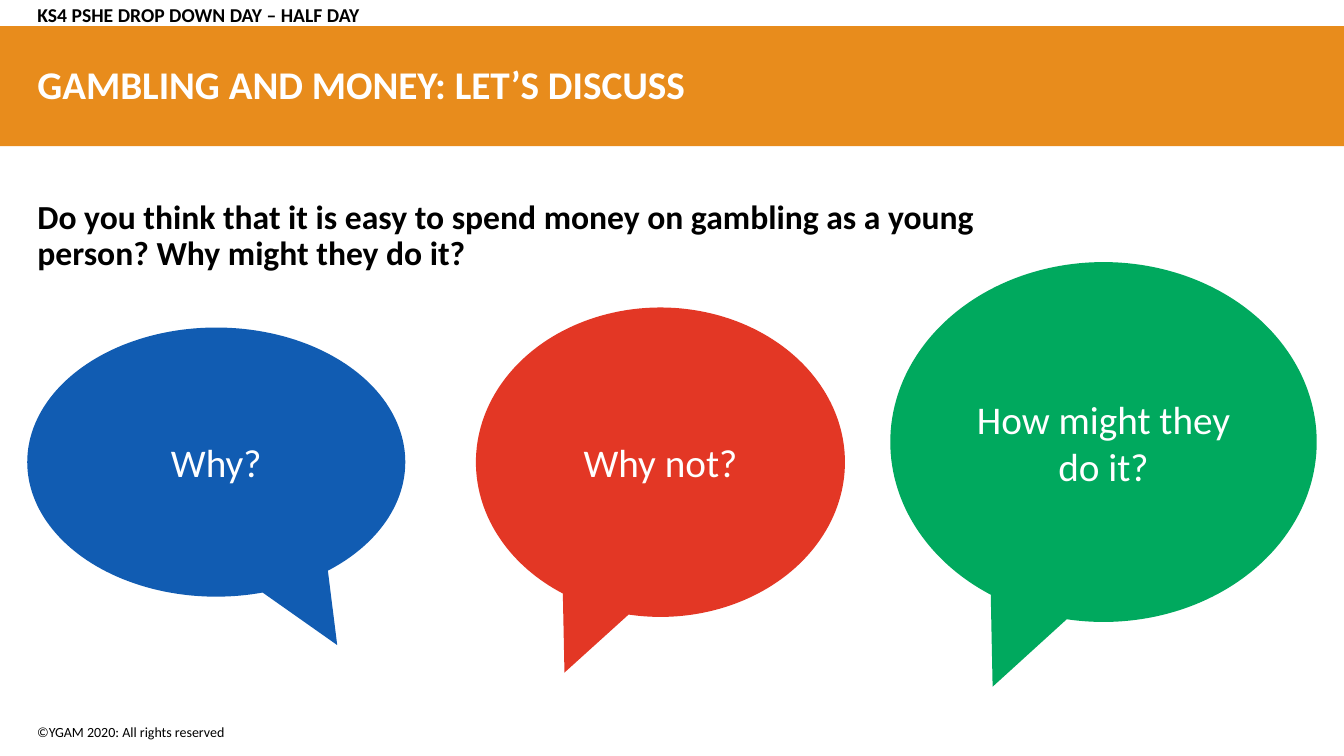
"""Build the discussion slide on gambling and money with three speech bubbles."""
from lxml.etree import SubElement
from pptx import Presentation
from pptx.dml.color import RGBColor
from pptx.enum.shapes import MSO_SHAPE as Shape
from pptx.enum.text import MSO_ANCHOR as Anchor, MSO_AUTO_SIZE as AutoSize, PP_ALIGN as Align
from pptx.oxml.ns import qn
from pptx.util import Inches, Pt

WHITE = RGBColor(0xFF, 0xFF, 0xFF)
BLACK = RGBColor(0x00, 0x00, 0x00)
ORANGE = RGBColor(0xE8, 0x8C, 0x1C)
RED = RGBColor(0xE3, 0x37, 0x25)
BLUE = RGBColor(0x11, 0x5C, 0xB2)
GREEN = RGBColor(0x00, 0xA9, 0x5E)
MARGIN = 2.03

deck = Presentation()
deck.slide_width, deck.slide_height = Inches(13.33), Inches(7.5)
page = deck.slides.add_slide(deck.slide_layouts.get_by_name("Two Content"))


def area(left, top, width, height):
    """Turn percentages of the slide into a left, top, width, height box."""
    across, down = deck.slide_width / 100, deck.slide_height / 100
    return round(left * across), round(top * down), round(width * across), round(height * down)


def write(shape, text, size, colour, bold=False, align=Align.LEFT, anchor=Anchor.MIDDLE):
    """Fill a shape with one formatted paragraph and return the paragraph."""
    frame = shape.text_frame
    frame.word_wrap = True
    frame.auto_size = AutoSize.NONE
    frame.vertical_anchor = anchor
    para = frame.paragraphs[0]
    para.text = text
    para.alignment = align
    para.space_before = Pt(0)
    para.font.name, para.font.size, para.font.bold = "Calibri", Pt(size), bold
    para.font.color.rgb = colour
    return para


title, question, header = page.placeholders

band = page.shapes.add_shape(Shape.RECTANGLE, *area(0, 3.47, 100, 15.87))
band.shadow.inherit = False
band.fill.solid()
band.fill.fore_color.rgb = ORANGE
band.line.fill.background()
title.element.addprevious(band.element)

texts = [
    (title, area(MARGIN, 3.6, 95.72, 15.87), "GAMBLING AND MONEY: LET’S DISCUSS", 28, WHITE, Anchor.MIDDLE),
    (question, area(MARGIN, 25.87, 78.85, 64.4),
     "Do you think that it is easy to spend money on gambling as a young person? Why might they do it?",
     24, BLACK, Anchor.TOP),
    (header, area(MARGIN, -0.8, 43.96, 5.87), "KS4 PSHE DROP DOWN DAY – HALF DAY", 14, BLACK, Anchor.MIDDLE),
]
for holder, box, text, size, colour, anchor in texts:
    holder.left, holder.top, holder.width, holder.height = box
    properties = holder.text_frame.paragraphs[0]._p.get_or_add_pPr()
    properties.set("marL", "0")
    properties.set("indent", "0")
    SubElement(properties, qn("a:buNone"))
    para = write(holder, text, size, colour, bold=True, anchor=anchor)
    para.line_spacing = 0.9

rights = page.shapes.add_textbox(*area(MARGIN, 95.07, 42.3, 3.6))
write(rights, "©YGAM 2020: All rights reserved", 10, BLACK, anchor=Anchor.TOP)

bubbles = [
    ("Why not?", RED, area(35.41, 40.67, 27.46, 40.93), (-0.26, 0.68)),
    ("Why?", BLUE, area(MARGIN, 43.33, 28.13, 35.6), (0.32, 0.68)),
    ("How might they do it?", GREEN, area(66.24, 34.67, 31.73, 47.6), (-0.26, 0.68)),
]
for text, colour, box, tail in bubbles:
    bubble = page.shapes.add_shape(Shape.OVAL_CALLOUT, *box)
    bubble.shadow.inherit = False
    bubble.fill.solid()
    bubble.fill.fore_color.rgb = colour
    bubble.line.fill.background()
    bubble.adjustments[0], bubble.adjustments[1] = tail
    write(bubble, text, 28, WHITE, align=Align.CENTER)

deck.save("out.pptx")
